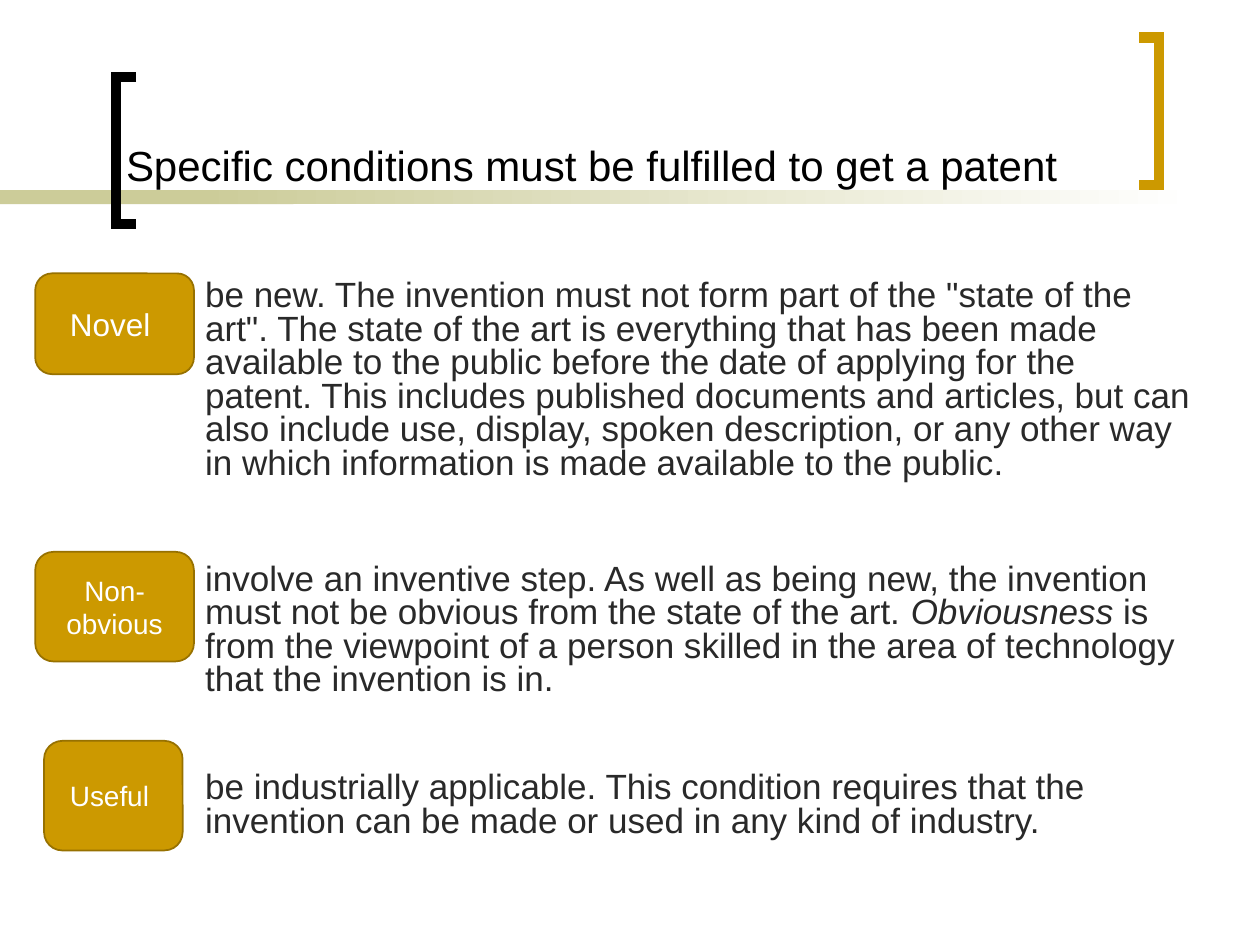
"""Build a slide on the three conditions for getting a patent."""
from lxml.etree import SubElement
from pptx import Presentation
from pptx.dml.color import RGBColor
from pptx.enum.shapes import MSO_SHAPE
from pptx.enum.text import MSO_ANCHOR, PP_ALIGN
from pptx.oxml.ns import qn
from pptx.util import Inches, Pt


def rgb(value):
    return RGBColor.from_string(value)


def set_font(p, size, color):
    p.font.name = "Arial"
    p.font.size = Pt(size)
    p.font.color.rgb = rgb(color)


prs = Presentation()
prs.slide_width, prs.slide_height = Inches(10), Inches(7.5)
s = prs.slides.add_slide(prs.slide_layouts[5])

for left, width in [(0, 2.33), (1.58, 7.92)]:
    bar = s.shapes.add_shape(MSO_SHAPE.RECTANGLE, Inches(left), Inches(1.51),
                             Inches(width), Inches(0.11))
    bar.shadow.inherit = False
    bar.line.fill.background()
    bar.fill.solid()
    bar.fill.fore_color.rgb = rgb("CCCC99")
bar.fill.gradient()
bar.fill.gradient_angle = 0
for stop, position, color in zip(bar.fill.gradient_stops, (0, 1), ("CCCC99", "FFFFFF")):
    stop.position = position
    stop.color.rgb = rgb(color)

for tip, spine, top, color in [(1.08, 0.92, 0.61, "000000"), (9.04, 9.2, 0.3, "CC9900")]:
    points = [(spine, top), (spine, top + 1.17), (tip, top + 1.17)]
    builder = s.shapes.build_freeform(Inches(tip), Inches(top))
    builder.add_line_segments([(Inches(x), Inches(y)) for x, y in points], close=False)
    bracket = builder.convert_to_shape()
    bracket.shadow.inherit = False
    bracket.fill.background()
    bracket.line.color.rgb = rgb(color)
    bracket.line.width = Pt(6)
    SubElement(bracket.line._get_or_add_ln(), qn("a:miter"), lim="800000")

title = s.shapes.title
title.left, title.top, title.width, title.height = (
    Inches(0.9), Inches(0), Inches(8.82), Inches(1.56))
tf = title.text_frame
tf.text = "Specific conditions must be fulfilled to get a patent"
tf.vertical_anchor = MSO_ANCHOR.BOTTOM
p = tf.paragraphs[0]
p.alignment = PP_ALIGN.LEFT
set_font(p, 24, "000000")

conditions = [
    (0, [("be new. The invention must not form part of the \"state of the art\". The state "
          "of the art is everything that has been made available to the public before the "
          "date of applying for the patent. This includes published documents and articles, "
          "but can also include use, display, spoken description, or any other way in which "
          "information is made available to the public.", False)]),
    (47, [("involve an inventive step. As well as being new, the invention must not be "
           "obvious from the state of the art. ", False),
          ("Obviousness", True),
          (" is from the viewpoint of a person skilled in the area of technology that the "
           "invention is in.", False)]),
    (42.5, [("be industrially applicable. This condition requires that the invention can be "
             "made or used in any kind of industry.", False)]),
]
body = s.shapes.add_textbox(Inches(1.53), Inches(2.18), Inches(8.04), Inches(5.12))
tf = body.text_frame
tf.word_wrap = True
for i, (gap, runs) in enumerate(conditions):
    p = tf.add_paragraph() if i else tf.paragraphs[0]
    p.line_spacing = Pt(19.2)
    p.space_before = Pt(gap)
    set_font(p, 20, "292929")
    for text, italic in runs:
        r = p.add_run()
        r.text = text
        if italic:
            r.font.italic = True

labels = [
    ("Novel ", MSO_SHAPE.ROUNDED_RECTANGLE, 0.28, 2.17, 1.26, 0.8, 18),
    ("Non-obvious", MSO_SHAPE.FLOWCHART_ALTERNATE_PROCESS, 0.28, 4.38, 1.26, 0.87, 16),
    ("Useful ", MSO_SHAPE.FLOWCHART_ALTERNATE_PROCESS, 0.35, 5.88, 1.1, 0.87, 16),
]
for text, kind, left, top, width, height, size in labels:
    sp = s.shapes.add_shape(kind, Inches(left), Inches(top), Inches(width), Inches(height))
    sp.shadow.inherit = False
    sp.fill.solid()
    sp.fill.fore_color.rgb = rgb("CC9900")
    sp.line.color.rgb = rgb("977100")
    sp.line.width = Pt(1)
    tf = sp.text_frame
    tf.text = text
    tf.word_wrap = True
    tf.vertical_anchor = MSO_ANCHOR.MIDDLE
    p = tf.paragraphs[0]
    p.alignment = PP_ALIGN.CENTER
    set_font(p, size, "FFFFFF")

prs.save("out.pptx")
